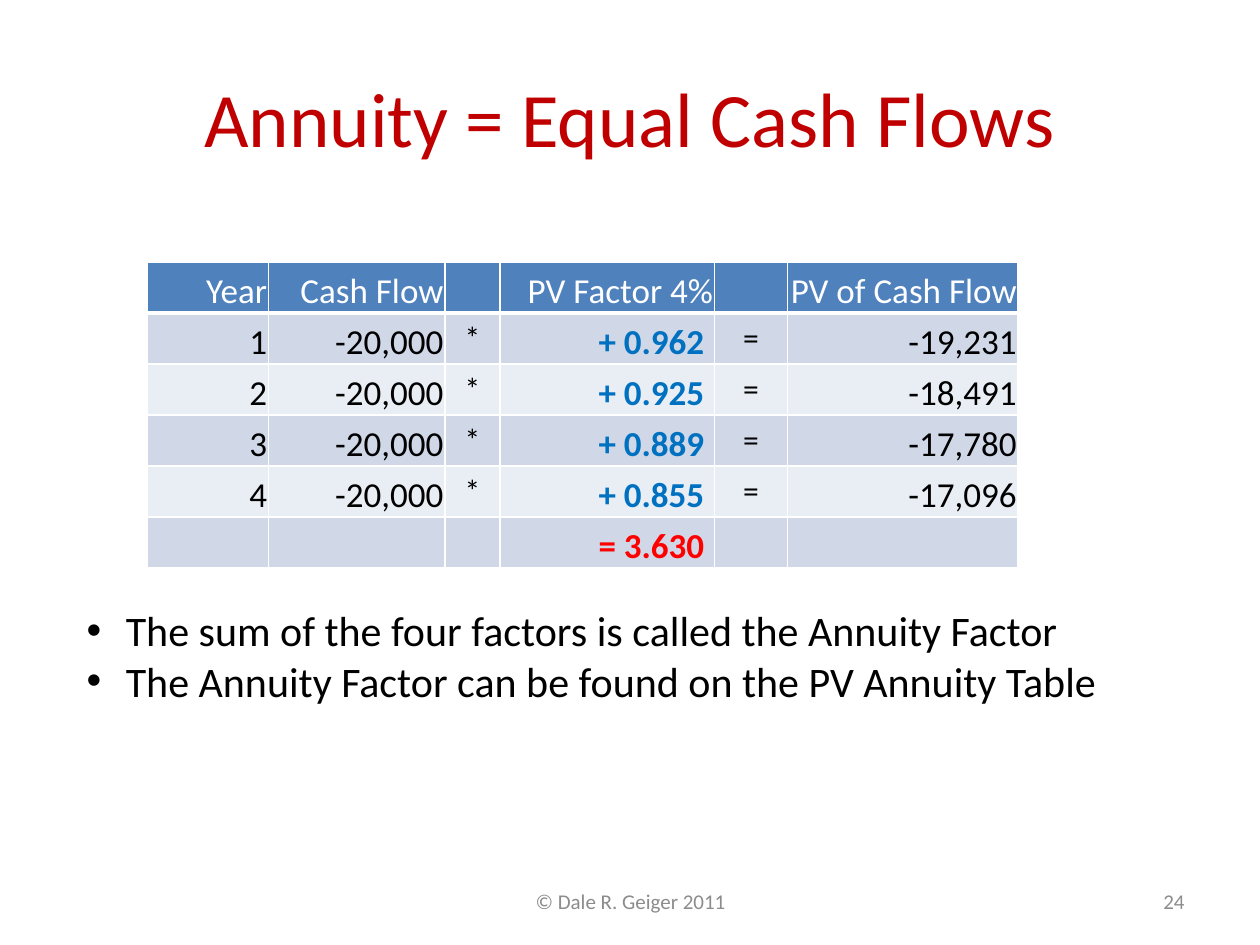
from lxml import etree
from pptx import Presentation
from pptx.dml.color import RGBColor
from pptx.enum.text import MSO_ANCHOR, PP_ALIGN
from pptx.oxml.ns import qn
from pptx.util import Inches, Pt

LEFT, MID, RIGHT = PP_ALIGN.LEFT, PP_ALIGN.CENTER, PP_ALIGN.RIGHT
TOP, CENTER, BOTTOM = MSO_ANCHOR.TOP, MSO_ANCHOR.MIDDLE, MSO_ANCHOR.BOTTOM

WIDE, HIGH = 10, 7.5
FONT = "Calibri"
HEAD, BANDS = "4F81BD", ("D0D8E8", "E9EDF4")
WHITE, BLACK, BLUE, RED, GREY = "FFFFFF", "000000", "0070C0", "FF0000", "8C8C8C"

TITLE = "Annuity = Equal Cash Flows"
NOTES = [
    "The sum of the four factors is called the Annuity Factor",
    "The Annuity Factor can be found on the PV Annuity Table",
]
ROWS = [
    ("Year", "Cash Flow", "", "PV Factor 4%", "", "PV of Cash Flow"),
    ("1", "-20,000", "*", "+ 0.962", "=", "-19,231"),
    ("2", "-20,000", "*", "+ 0.925", "=", "-18,491"),
    ("3", "-20,000", "*", "+ 0.889", "=", "-17,780"),
    ("4", "-20,000", "*", "+ 0.855", "=", "-17,096"),
    ("", "", "", "= 3.630", "", ""),
]
COLS = (0.96, 1.4, 0.44, 1.7, 0.58, 1.83)
SIGNS, FACTOR = (2, 4), 3
STEP = 0.405
FOOT = 6.95

BOXES = [
    ((0.5, 0.3, 9, 1.25), [TITLE], 44, "C00000", MID, CENTER, False),
    ((0.59, 4.75, 8.33, 0.91), NOTES, 24, BLACK, LEFT, TOP, True),
    ((3.42, FOOT, 3.17, 0.4), ["© Dale R. Geiger 2011"], 12, GREY, MID, CENTER, False),
    ((7.17, FOOT, 2.33, 0.4), ["24"], 12, GREY, RIGHT, CENTER, False),
]


def color(code):
    return RGBColor.from_string(code)


def style(para, size, code, align, bold=False):
    para.alignment = align
    form = {"name": FONT, "size": Pt(size), "bold": bold}
    for key, value in form.items():
        setattr(para.font, key, value)
    para.font.color.rgb = color(code)


def bullet(para):
    props = para._p.get_or_add_pPr()
    indent = Inches(0.31)
    props.set("marL", str(indent))
    props.set("indent", str(-indent))
    etree.SubElement(props, qn("a:buFont"), typeface="Arial")
    etree.SubElement(props, qn("a:buChar"), char="•")


def add_box(slide, place, lines, size, code, align, anchor, listed):
    frame = slide.shapes.add_textbox(*map(Inches, place)).text_frame
    frame.word_wrap = True
    frame.vertical_anchor = anchor
    for i, line in enumerate(lines):
        para = frame.add_paragraph() if i else frame.paragraphs[0]
        para.text = line
        if listed:
            bullet(para)
        style(para, size, code, align)


def border(cell, head):
    props = cell._tc.get_or_add_tcPr()
    for side in ("lnL", "lnR", "lnT", "lnB"):
        width = Pt(3 if head and side == "lnB" else 1)
        line = etree.SubElement(props, qn("a:" + side), w=str(width))
        fill = etree.SubElement(line, qn("a:solidFill"))
        etree.SubElement(fill, qn("a:srgbClr"), val=WHITE)


def fill_cell(cell, text, row, col):
    head = row == 0
    border(cell, head)
    cell.fill.solid()
    cell.fill.fore_color.rgb = color(HEAD if head else BANDS[(row - 1) % 2])
    para = cell.text_frame.paragraphs[0]
    para.text = text
    if col in SIGNS or not text:
        style(para, 18, BLACK, MID)
        return
    bold = col == FACTOR and not head
    form = {
        "vertical_anchor": BOTTOM,
        "margin_left": Inches(0.01),
        "margin_right": Inches(0.08 if bold else 0.01),
        "margin_top": Inches(0.01),
        "margin_bottom": 0,
    }
    for key, value in form.items():
        setattr(cell, key, value)
    code = WHITE if head else BLACK
    if bold:
        code = RED if row == len(ROWS) - 1 else BLUE
    style(para, 20, code, RIGHT, bold)


def add_grid(slide):
    place = (1.17, 2.08, sum(COLS), STEP * len(ROWS))
    grid = slide.shapes.add_table(len(ROWS), len(COLS), *map(Inches, place)).table
    for col, width in zip(grid.columns, COLS):
        col.width = Inches(width)
    for r, row in enumerate(ROWS):
        grid.rows[r].height = Inches(STEP)
        for c, text in enumerate(row):
            fill_cell(grid.cell(r, c), text, r, c)


def main():
    deck = Presentation()
    deck.slide_width, deck.slide_height = Inches(WIDE), Inches(HIGH)
    slide = deck.slides.add_slide(deck.slide_layouts[6])
    title, *rest = BOXES
    add_box(slide, *title)
    add_grid(slide)
    for box in rest:
        add_box(slide, *box)
    deck.save("out.pptx")


if __name__ == "__main__":
    main()
